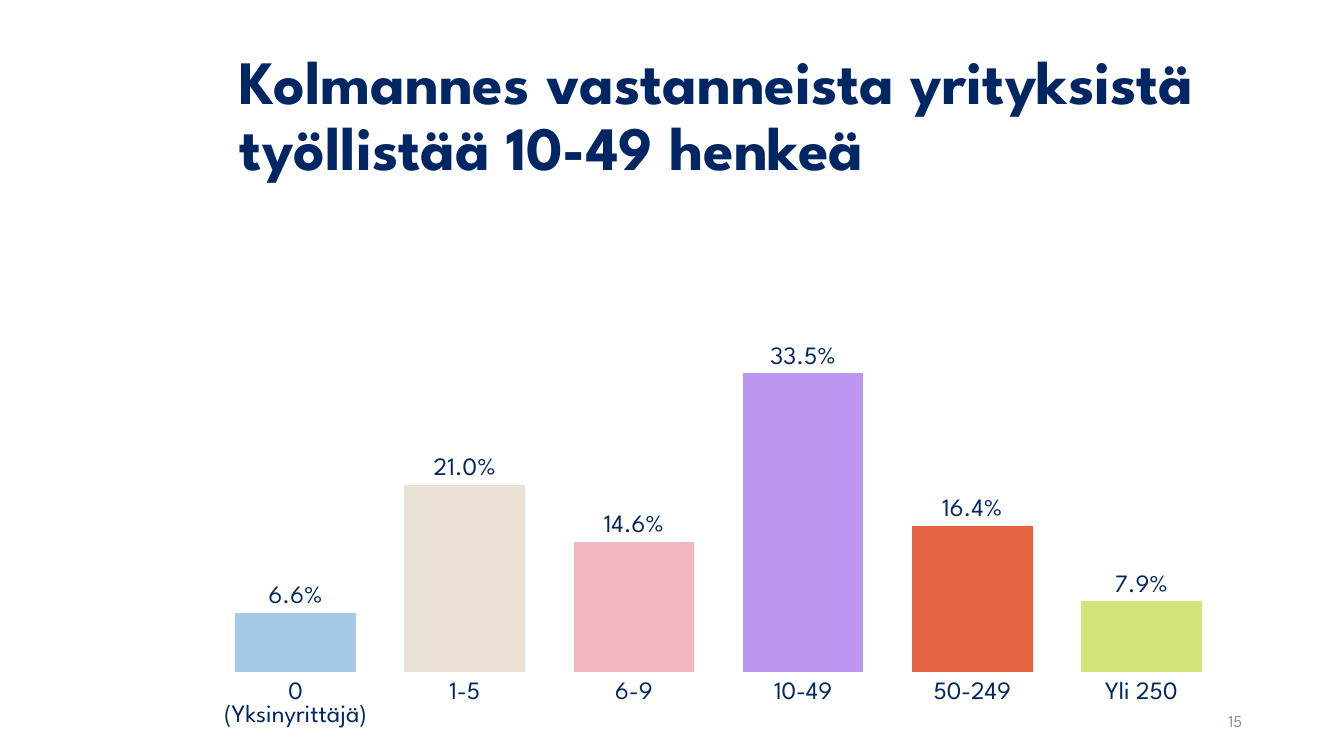
from lxml import etree
from pptx import Presentation
from pptx.chart import data as chart_data
from pptx.dml.color import RGBColor
from pptx.enum import chart as chart_enum, text as text_enum
from pptx.oxml import ns
from pptx.util import Inches, Pt

FONT = "League Spartan"
COLORS = {"navy": "002663", "grey": "8C8E9F"}

# Company size, share of respondents, column colour
COMPANY_SIZES = [
    ("0 (Yksinyrittäjä)", 0.066, "A5C9E7"),
    ("1-5", 0.21, "E8E2D5"),
    ("6-9", 0.146, "F2B7BF"),
    ("10-49", 0.335, "BB95EF"),
    ("50-249", 0.164, "E66342"),
    ("Yli 250", 0.079, "D1E57C"),
]


def style_font(font, size, color, bold=False):
    font.name = FONT
    font.size = Pt(size)
    font.bold = bold
    font.color.rgb = RGBColor.from_string(color)


def fill_text(shape, wording, size, color, alignment, bold=False):
    frame = shape.text_frame
    frame.text = wording
    frame.word_wrap = True
    frame.auto_size = text_enum.MSO_AUTO_SIZE.NONE
    frame.vertical_anchor = text_enum.MSO_ANCHOR.MIDDLE
    paragraph = frame.paragraphs[0]
    paragraph.alignment = alignment
    style_font(paragraph.runs[0].font, size, color, bold)
    return paragraph


def add_title(slide, wording):
    title = slide.shapes.title
    title.left, title.top = Inches(2.28), Inches(0.44)
    title.width, title.height = Inches(10.26), Inches(1.45)
    paragraph = fill_text(title, wording, 44, COLORS["navy"],
                          text_enum.PP_ALIGN.LEFT, bold=True)
    paragraph.line_spacing = 0.9


def add_page_number(slide, number):
    box = slide.shapes.add_textbox(Inches(9.42), Inches(6.95), Inches(3), Inches(0.4))
    paragraph = fill_text(box, number, 12, COLORS["grey"], text_enum.PP_ALIGN.RIGHT)
    paragraph.space_after = Pt(6)


def set_plot_area(chart, **fractions):
    """Fix the inner plot area as fractions of the chart frame."""
    plot_area = chart._chartSpace.chart.plotArea
    for old_layout in plot_area.findall(ns.qn("c:layout")):
        plot_area.remove(old_layout)
    layout = etree.Element(ns.qn("c:layout"))
    plot_area.insert(0, layout)
    manual = etree.SubElement(layout, ns.qn("c:manualLayout"))
    settings = {"layoutTarget": "inner", "xMode": "edge", "yMode": "edge", **fractions}
    for name, value in settings.items():
        etree.SubElement(manual, ns.qn(f"c:{name}")).set("val", str(value))


def add_size_chart(slide):
    categories, shares, fills = zip(*COMPANY_SIZES)
    data = chart_data.CategoryChartData(number_format="0.0%")
    data.categories = categories
    data.add_series("Series 1", shares)
    chart = slide.shapes.add_chart(
        chart_enum.XL_CHART_TYPE.COLUMN_CLUSTERED,
        Inches(1.75), Inches(2.09), Inches(10.41), Inches(5.13), data).chart
    chart.has_title = False
    chart.has_legend = False
    style_font(chart.font, 18, COLORS["navy"])
    set_plot_area(chart, x=0.033, y=0.03, w=0.967, h=0.87)

    # Axes
    value_axis = chart.value_axis
    value_axis.minimum_scale, value_axis.maximum_scale = 0, 0.5
    value_axis.has_major_gridlines = False
    value_axis.visible = False
    category_axis = chart.category_axis
    category_axis.format.line.fill.background()
    style_font(category_axis.tick_labels.font, 18, COLORS["navy"])

    # Columns
    plot = chart.plots[0]
    plot.gap_width, plot.overlap = 40, -2
    plot.vary_by_categories = False
    series = plot.series[0]
    for index, color in enumerate(fills):
        fill = series.points[index].format.fill
        fill.solid()
        fill.fore_color.rgb = RGBColor.from_string(color)

    # Value labels
    labels = series.data_labels
    labels.show_value = True
    labels.position = chart_enum.XL_LABEL_POSITION.OUTSIDE_END
    labels.number_format = "0.0%"
    labels.number_format_is_linked = False
    style_font(labels.font, 18, COLORS["navy"])


def main():
    presentation = Presentation()
    presentation.slide_width = Inches(13.33)
    presentation.slide_height = Inches(7.5)
    slide = presentation.slides.add_slide(presentation.slide_layouts.get_by_name("Title Only"))
    add_page_number(slide, "15")
    add_title(slide, "Kolmannes vastanneista yrityksistä työllistää 10-49 henkeä")
    add_size_chart(slide)
    presentation.save("out.pptx")


if __name__ == "__main__":
    main()
